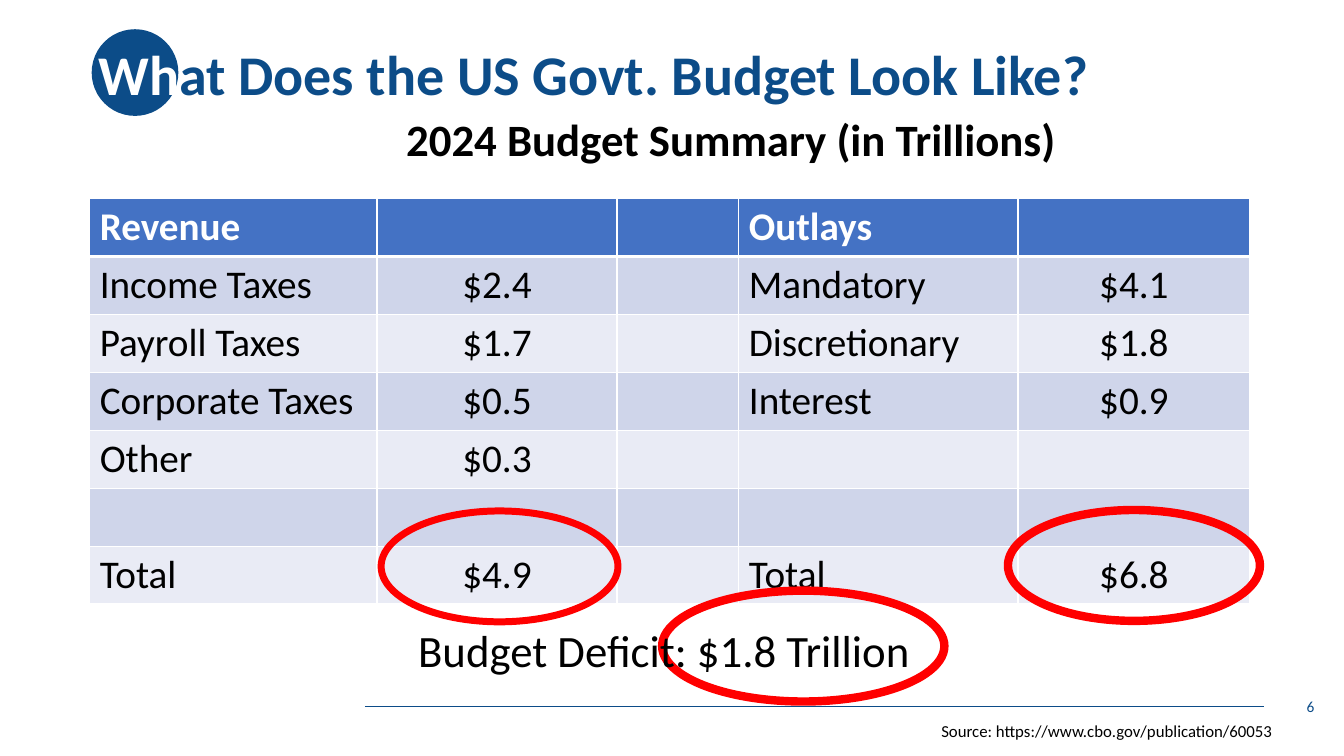
from dataclasses import dataclass

from lxml.etree import SubElement
from pptx import Presentation
from pptx.dml.color import RGBColor
from pptx.enum.shapes import MSO_CONNECTOR, MSO_SHAPE
from pptx.enum.text import MSO_ANCHOR, MSO_AUTO_SIZE, PP_ALIGN
from pptx.oxml.ns import qn
from pptx.util import Pt


@dataclass(frozen=True)
class Theme:
    """Colours, font and type sizes of the deck."""
    font: str = "Calibri"
    navy: str = "0C4C88"
    white: str = "FFFFFF"
    black: str = "000000"
    red: str = "FF0000"
    header: str = "4472C4"
    bands: tuple = ("E9EBF5", "CFD5EA")
    title: int = 40
    heading: int = 32
    cell: int = 28
    source: int = 12
    number: int = 11


@dataclass(frozen=True)
class Box:
    """A rectangle in points."""
    left: float
    top: float
    width: float
    height: float

    def inside(self, left, top, width, height):
        """Return a box offset from this one's corner."""
        return Box(self.left + left, self.top + top, width, height)

    def lengths(self):
        """Return the four lengths for python-pptx."""
        return [Pt(value) for value in (self.left, self.top, self.width, self.height)]


THEME = Theme()
COLUMN_WIDTHS = (205.2, 171.4, 87.1, 199.4, 165.6)
BUDGET = (
    ("Revenue", "", "", "Outlays", ""),
    ("Income Taxes", "$2.4", "", "Mandatory", "$4.1"),
    ("Payroll Taxes", "$1.7", "", "Discretionary", "$1.8"),
    ("Corporate Taxes", "$0.5", "", "Interest", "$0.9"),
    ("Other", "$0.3", "", "", ""),
    ("", "", "", "", ""),
    ("Total", "$4.9", "", "Total", "$6.8"),
)


def add_span(para, text, size, color, bold=False):
    """Add one formatted run to a paragraph."""
    span = para.add_run()
    span.text = text
    span.font.name = THEME.font
    span.font.size = Pt(size)
    span.font.bold = bold
    span.font.color.rgb = RGBColor.from_string(color)


def add_text(page, box, spans, size, bold=False, wrap=False, align=PP_ALIGN.LEFT):
    """Add a text box holding one line of (text, colour) spans."""
    frame = page.shapes.add_textbox(*box.lengths()).text_frame
    frame.word_wrap = wrap
    frame.auto_size = MSO_AUTO_SIZE.NONE if wrap else MSO_AUTO_SIZE.SHAPE_TO_FIT_TEXT
    frame.vertical_anchor = MSO_ANCHOR.MIDDLE if wrap else MSO_ANCHOR.TOP
    para = frame.paragraphs[0]
    para.alignment = align
    for text, color in spans:
        add_span(para, text, size, color, bold)


def add_ring(page, box, weight):
    """Add an unfilled red ellipse."""
    ring = page.shapes.add_shape(MSO_SHAPE.OVAL, *box.lengths())
    ring.shadow.inherit = False
    ring.fill.background()
    ring.line.color.rgb = RGBColor.from_string(THEME.red)
    ring.line.width = Pt(weight)


def add_borders(cell, is_header):
    """Give a cell white borders, heavier below the header."""
    properties = cell._tc.get_or_add_tcPr()
    for side in ("lnL", "lnR", "lnT", "lnB"):
        weight = 3 if is_header and side == "lnB" else 1
        line = SubElement(properties, qn(f"a:{side}"), w=str(Pt(weight)))
        SubElement(SubElement(line, qn("a:solidFill")), qn("a:srgbClr"), val=THEME.white)


def add_header(page, box):
    """Place the circle, the title and the table heading."""
    circle = page.shapes.add_shape(MSO_SHAPE.OVAL, *box.inside(2.1, 20.9, 61.9, 61.9).lengths())
    circle.shadow.inherit = False
    circle.fill.solid()
    circle.fill.fore_color.rgb = RGBColor.from_string(THEME.navy)
    circle.line.fill.background()
    title = (("Wh", THEME.white), ("at Does the US Govt. Budget Look Like?", THEME.navy))
    add_text(page, box, title, THEME.title, bold=True, wrap=True)
    add_text(page, box.inside(219.6, 76.3, 483, 46),
             [("2024 Budget Summary (in Trillions)", THEME.black)], THEME.heading, bold=True)


def add_budget(page, box):
    """Place the budget table and ring both totals."""
    table = page.shapes.add_table(len(BUDGET), len(COLUMN_WIDTHS), *box.lengths()).table
    for column, width in zip(table.columns, COLUMN_WIDTHS):
        column.width = Pt(width)
    for row_index, texts in enumerate(BUDGET):
        table.rows[row_index].height = Pt(box.height / len(BUDGET))
        is_header = row_index == 0
        fill = THEME.header if is_header else THEME.bands[row_index % 2]
        for column_index, text in enumerate(texts):
            cell = table.cell(row_index, column_index)
            add_borders(cell, is_header)
            cell.fill.solid()
            cell.fill.fore_color.rgb = RGBColor.from_string(fill)
            if text:
                para = cell.text_frame.paragraphs[0]
                if text.startswith("$"):
                    para.alignment = PP_ALIGN.CENTER
                add_span(para, text, THEME.cell,
                         THEME.white if is_header else THEME.black, is_header)
    add_ring(page, box.inside(655.9, 222.5, 180, 79.2), 6)
    add_ring(page, box.inside(208.1, 223.2, 169.2, 79.2), 5)


def add_deficit(page, box):
    """Place the deficit line over its ring."""
    add_ring(page, box.inside(181.4, 0, 201.6, 79.2), 6)
    add_text(page, box.inside(0, 19.5, 370, 46),
             [("Budget Deficit: $1.8 Trillion", THEME.black)], THEME.heading)


def add_footer(page, box):
    """Place the rule, the page number and the source."""
    rule_top = Pt(box.top + 14.4)
    rule = page.shapes.add_connector(MSO_CONNECTOR.STRAIGHT, Pt(box.left), rule_top,
                                     Pt(box.left + 642.3), rule_top)
    rule.line.color.rgb = RGBColor.from_string(THEME.navy)
    rule.line.width = Pt(0.5)
    SubElement(rule._element.spPr, qn("a:effectLst"))
    add_text(page, box.inside(box.width - 216, 0, 216, 28.8), [("6", THEME.navy)],
             THEME.number, wrap=True, align=PP_ALIGN.RIGHT)
    add_text(page, box.inside(404.7, 20.9, 254.2, 21.6),
             [("Source: https://www.cbo.gov/publication/60053", THEME.black)], THEME.source)


def main():
    """Build and save the deck."""
    deck = Presentation()
    deck.slide_width, deck.slide_height = Pt(960), Pt(540)
    page = deck.slides.add_slide(deck.slide_layouts[6])
    add_header(page, Box(63.4, 0, 828, 104.4))
    add_budget(page, Box(64.1, 141.8, sum(COLUMN_WIDTHS), 289.8))
    add_deficit(page, Box(291.6, 421.9, 383, 79.2))
    add_footer(page, Box(260.6, 490.3, 685.4, 42.5))
    deck.save("out.pptx")


if __name__ == "__main__":
    main()
